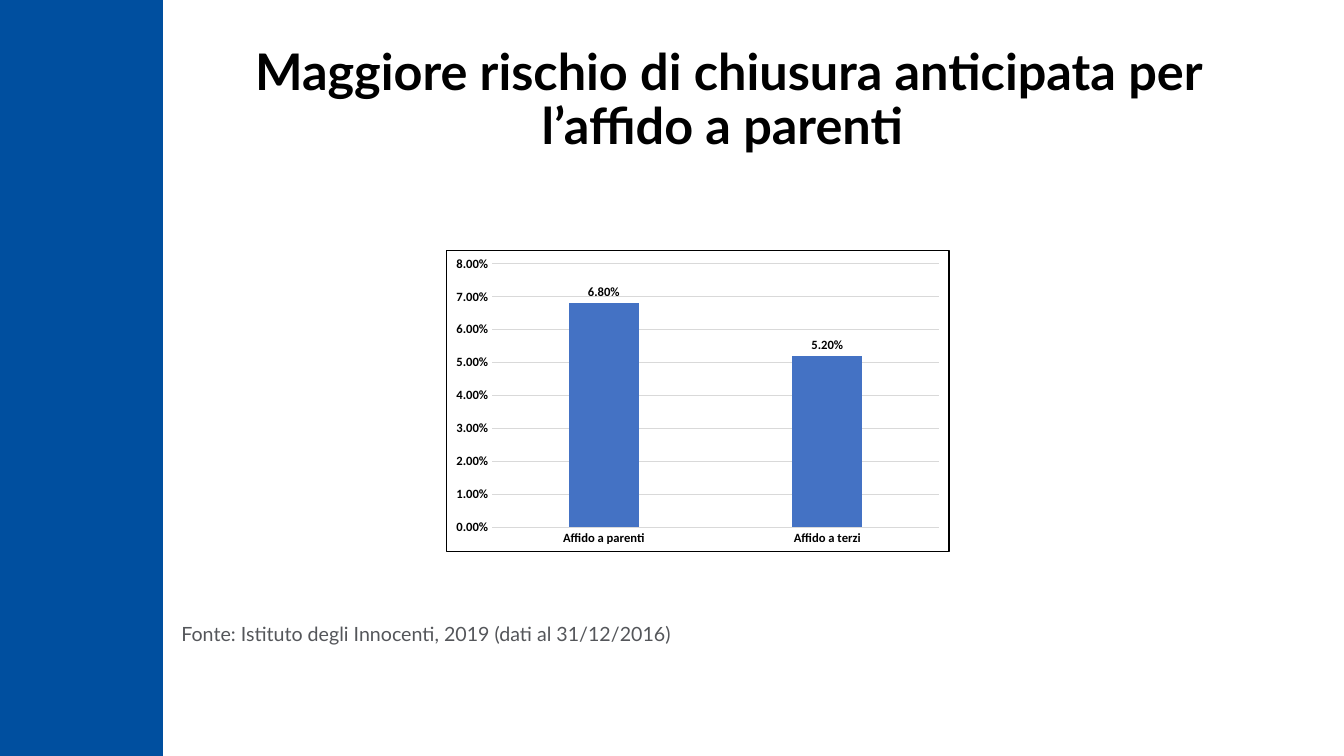
from lxml import etree
from pptx import Presentation
from pptx.chart.data import CategoryChartData
from pptx.dml.color import RGBColor
from pptx.enum.chart import XL_CHART_TYPE, XL_LABEL_POSITION, XL_TICK_MARK
from pptx.enum.shapes import MSO_SHAPE
from pptx.enum.text import MSO_ANCHOR, PP_ALIGN
from pptx.util import Inches, Pt

COLUMN = XL_CHART_TYPE.COLUMN_CLUSTERED
OUTSIDE = XL_LABEL_POSITION.OUTSIDE_END
NO_TICK = XL_TICK_MARK.NONE
RECT = MSO_SHAPE.RECTANGLE
MIDDLE = MSO_ANCHOR.MIDDLE
LEFT, CENTER = PP_ALIGN.LEFT, PP_ALIGN.CENTER

COLORS = {
    "band": "004F9F",
    "bar": "4472C4",
    "grid": "D9D9D9",
    "text": "000000",
    "note": "54565A",
    "back": "FFFFFF",
}
PERCENT = "0.00%"
RATES = {"Affido a parenti": 0.068, "Affido a terzi": 0.052}


def color(name):
    return RGBColor.from_string(COLORS[name])


def add_band(slide, box):
    band = slide.shapes.add_shape(RECT, *map(Inches, box))
    band.shadow.inherit = False
    band.fill.solid()
    band.fill.fore_color.rgb = color("band")
    band.line.color.rgb = color("band")
    band.line.width = Pt(1)


def add_text(slide, box, text, size, hue, bold=False, align=LEFT, pitch=0.9):
    frame = slide.shapes.add_textbox(*map(Inches, box)).text_frame
    frame.word_wrap = True
    frame.vertical_anchor = MIDDLE
    para = frame.paragraphs[0]
    para.alignment = align
    para.line_spacing = pitch
    run = para.add_run()
    run.text = text
    run.font.name = "Lato"
    run.font.size = Pt(size)
    run.font.bold = bold
    run.font.color.rgb = color(hue)


def set_font(font, size):
    font.name = "Calibri"
    font.size = Pt(size)
    font.bold = True
    font.color.rgb = color("text")


def set_line(line, hue):
    line.color.rgb = color(hue)
    line.width = Pt(0.75)


def add_frame(chart):
    """Give the chart area a white fill and a black border."""
    frame = etree.fromstring(
        '<c:spPr xmlns:c="http://schemas.openxmlformats.org/drawingml/2006/chart"'
        ' xmlns:a="http://schemas.openxmlformats.org/drawingml/2006/main">'
        f'<a:solidFill><a:srgbClr val="{COLORS["back"]}"/></a:solidFill>'
        f'<a:ln w="{Pt(1)}"><a:solidFill><a:srgbClr val="{COLORS["text"]}"/>'
        '</a:solidFill></a:ln></c:spPr>'
    )
    chart.element.chart.addnext(frame)


def add_rates(slide, box):
    data = CategoryChartData(number_format=PERCENT)
    data.categories = list(RATES)
    data.add_series("Series 1", list(RATES.values()))
    chart = slide.shapes.add_chart(COLUMN, *map(Inches, box), data).chart
    chart.has_title = False
    chart.has_legend = False
    set_font(chart.font, 10)
    add_frame(chart)

    for axis in (chart.category_axis, chart.value_axis):
        axis.major_tick_mark = axis.minor_tick_mark = NO_TICK
        set_font(axis.tick_labels.font, 9)
    set_line(chart.category_axis.format.line, "grid")

    scale = chart.value_axis
    scale.minimum_scale, scale.maximum_scale, scale.major_unit = 0, 0.08, 0.01
    scale.tick_labels.number_format = PERCENT
    scale.tick_labels.number_format_is_linked = False
    scale.format.line.fill.background()
    set_line(scale.major_gridlines.format.line, "grid")

    plot = chart.plots[0]
    plot.vary_by_categories = False
    plot.gap_width = 219
    plot.overlap = -27
    bars = plot.series[0]
    bars.format.fill.solid()
    bars.format.fill.fore_color.rgb = color("bar")
    labels = bars.data_labels
    labels.show_value = True
    labels.position = OUTSIDE
    labels.number_format = PERCENT
    labels.number_format_is_linked = False
    set_font(labels.font, 9)


def main():
    deck = Presentation()
    deck.slide_width, deck.slide_height = Inches(13.33), Inches(7.5)
    slide = deck.slides.add_slide(deck.slide_layouts[6])
    add_band(slide, (0, 0, 1.61, 7.5))
    # The space after "parenti" shifts the centred second line.
    add_text(slide, (1.7, 0.16, 11.05, 1.69),
             "Maggiore rischio di chiusura anticipata per l’affido a parenti ",
             36, "text", bold=True, align=CENTER)
    add_rates(slide, (4.42, 2.48, 5, 3))
    add_text(slide, (1.7, 6.11, 11.05, 0.4),
             "Fonte: Istituto degli Innocenti, 2019 (dati al 31/12/2016)",
             14, "note", pitch=0.8)
    deck.save("out.pptx")


if __name__ == "__main__":
    main()
